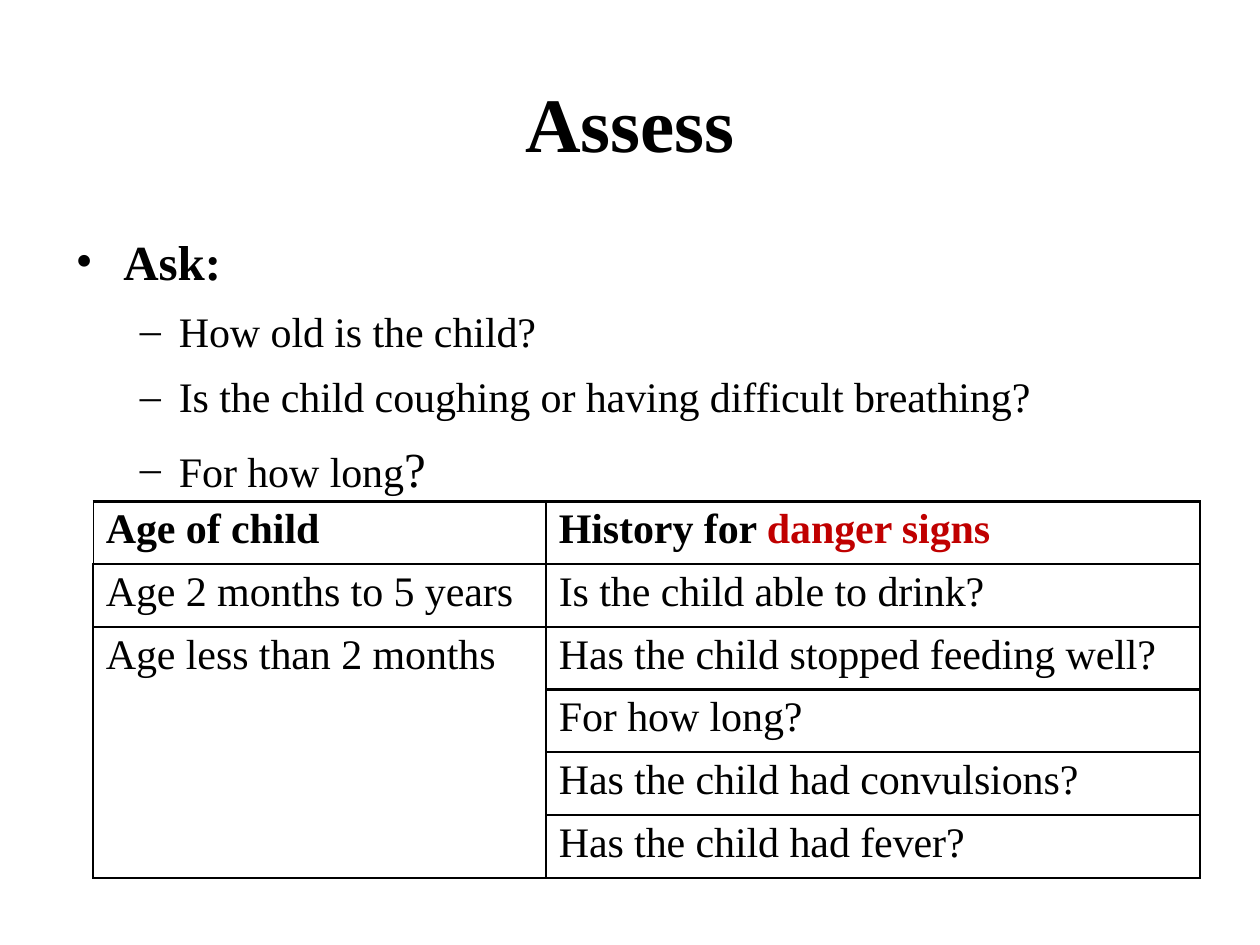
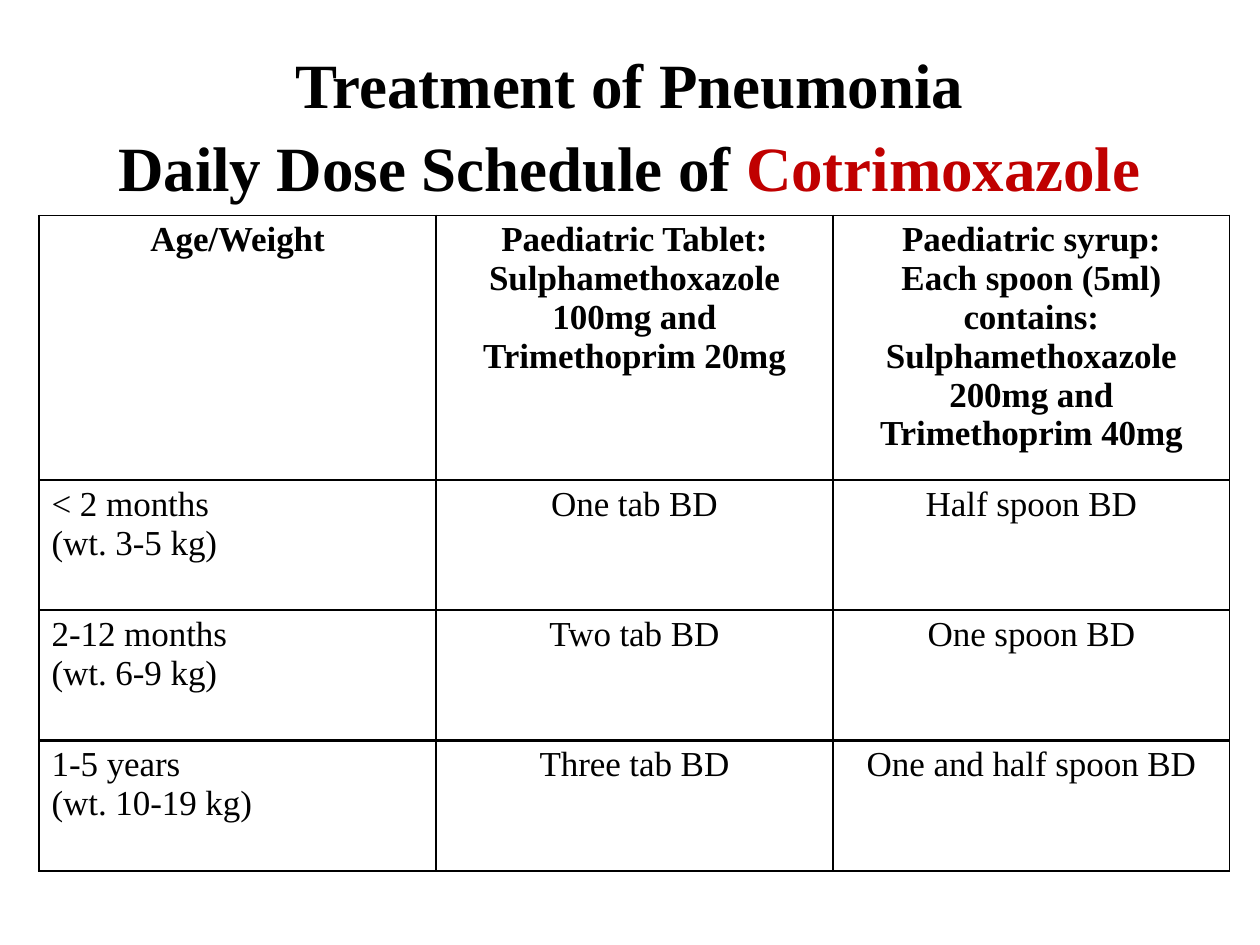
from lxml.etree import SubElement
from pptx import Presentation
from pptx.dml.color import RGBColor
from pptx.enum.text import PP_ALIGN
from pptx.oxml.ns import qn
from pptx.util import Inches, Pt

COLORS = {"ink": "000000", "danger": "C00000", "paper": "FFFFFF"}
FONT = "Times New Roman"
GRID_COLUMNS, GRID_ROWS = 100, 75
BULLETS = {"•": (0.39, -0.38), "–": (0.83, -0.31)}


def write(paragraph, text, size=24, bold=False, color="ink", spacing=-5):
    """Append text to the paragraph; each newline becomes a line break."""
    for number, line in enumerate(text.split("\n")):
        if number:
            paragraph.add_line_break()
        run = paragraph.add_run()
        run.text = line
        run.font.name = FONT
        run.font.size = Pt(size)
        run.font.bold = bold
        run.font.color.rgb = RGBColor.from_string(COLORS[color])
        run._r.get_or_add_rPr().set("spc", str(spacing))


def set_bullet(paragraph, symbol):
    margin, indent = BULLETS[symbol]
    properties = paragraph._p.get_or_add_pPr()
    properties.set("marL", str(Inches(margin)))
    properties.set("indent", str(Inches(indent)))
    SubElement(properties, qn("a:buFont"), typeface=FONT)
    SubElement(properties, qn("a:buChar"), char=symbol)


def set_borders(cell, **widths):
    """Draw the cell's edges; the keywords are left, right, top and bottom."""
    properties = cell._tc.get_or_add_tcPr()
    tags = {"left": "lnL", "right": "lnR", "top": "lnT", "bottom": "lnB"}
    for position, (side, tag) in enumerate(tags.items()):
        line = SubElement(properties, qn(f"a:{tag}"), w=str(Pt(widths[side])))
        fill = SubElement(line, qn("a:solidFill"))
        SubElement(fill, qn("a:srgbClr"), val=COLORS["ink"])
        properties.insert(position, line)


class Deck:
    def __init__(self):
        self.presentation = Presentation()
        self.presentation.slide_width = Inches(10)
        self.presentation.slide_height = Inches(7.5)
        self.slide = None

    def add_slide(self):
        self.slide = self.presentation.slides.add_slide(self.presentation.slide_layouts[6])
        fill = self.slide.background.fill
        fill.solid()
        fill.fore_color.rgb = RGBColor.from_string(COLORS["paper"])

    def x(self, columns):
        return int(self.presentation.slide_width * columns / GRID_COLUMNS)

    def y(self, rows):
        return int(self.presentation.slide_height * rows / GRID_ROWS)

    def place(self, left, top, width, height):
        return self.x(left), self.y(top), self.x(width), self.y(height)

    def fill_frame(self, frame, paragraphs, before, line_spacing=None, align=None, **style):
        """Write paragraphs, each a list of (text, format) runs."""
        for number, runs in enumerate(paragraphs):
            paragraph = frame.add_paragraph() if number else frame.paragraphs[0]
            paragraph.alignment = align
            paragraph.line_spacing = line_spacing
            paragraph.space_before = Pt(before[number] if number < len(before) else 0)
            for text, changes in runs:
                write(paragraph, text, **{**style, **changes})

    def text(self, at, paragraphs, before, inset, **style):
        frame = self.slide.shapes.add_textbox(*self.place(*at)).text_frame
        frame.word_wrap = True
        frame.margin_left = frame.margin_right = frame.margin_bottom = 0
        frame.margin_top = self.y(inset)
        self.fill_frame(frame, paragraphs, before, line_spacing=1.1, **style)
        return frame

    def title(self, at, paragraphs, inset, size):
        self.text(at, paragraphs, [1, 0.1], inset, size=size, bold=True, align=PP_ALIGN.CENTER)

    def bullets(self, at, items, before, inset):
        """Each item is a bullet symbol and its runs."""
        frame = self.text(at, [runs for _, runs in items], before, inset)
        for paragraph, (symbol, _) in zip(frame.paragraphs, items):
            set_bullet(paragraph, symbol)

    def table(self, at, widths, heights, rows, size, rules, left_rule_from=0,
              merge=None, centered=lambda row, column: False):
        """Build a table; rules are the widths of its horizontal lines."""
        table = self.slide.shapes.add_table(
            len(rows), len(widths), *self.place(*at, sum(widths), sum(heights))).table
        table.first_row = table.horz_banding = False
        for column, width in zip(table.columns, widths):
            column.width = self.x(width)
        for row, height in zip(table.rows, heights):
            row.height = self.y(height)
        if merge:
            first, last = merge
            table.cell(*first).merge(table.cell(*last))
        for row, values in enumerate(rows):
            for column, paragraphs in enumerate(values):
                cell = table.cell(row, column)
                cell.fill.background()
                if cell.is_spanned:
                    continue
                center = centered(row, column)
                cell.margin_left = 0 if center else self.x(1)
                cell.margin_right = cell.margin_bottom = 0
                cell.margin_top = self.y(0.4)
                self.fill_frame(cell.text_frame, paragraphs, [2.8], size=size, bold=row == 0,
                                align=PP_ALIGN.CENTER if center else PP_ALIGN.LEFT)
                thick = column == 0 and row >= left_rule_from
                set_borders(cell, left=1.5 if thick else 1, right=1,
                            top=rules[row], bottom=rules[row + 1])


def plain(*lines):
    return [[(line, {})] for line in lines]


def assess_slide(deck):
    deck.add_slide()
    deck.title((40, 5.2, 20, 7.6), plain("Assess"), inset=0.1, size=44)
    deck.bullets((5.9, 16.8, 76.4, 21.1), [
        ("•", [("Ask:", {"size": 28, "bold": True})]),
        ("–", [("How old is the child?", {})]),
        ("–", [("Is the child coughing or having difficult breathing?", {})]),
        ("–", [("For how long", {}), ("?", {"size": 28})]),
    ], before=[7.7, 5.8, 5.7, 6.8], inset=1.1)
    danger_header = [[("History for ", {}), ("danger signs", {"color": "danger"})]]
    questions = ["Has the child stopped feeding well?", "For how long?",
                 "Has the child had convulsions?", "Has the child had fever?"]
    ages = ["Age less than 2 months", "", "", ""]
    rows = [
        [plain("Age of child"), danger_header],
        [plain("Age 2 months to 5 years"), plain("Is the child able to drink?")],
        *([plain(age), plain(question)] for age, question in zip(ages, questions)),
    ]
    deck.table((7.4, 39.8), [35.95, 51.9], [4.98] * 6, rows, size=24, rules=[1.5] * 7,
               left_rule_from=1, merge=((2, 0), (5, 0)))


def dose_slide(deck):
    deck.add_slide()
    deck.title((4.5, 2.2, 90.9, 13.6), [
        [("Treatment of Pneumonia", {})],
        [("Daily Dose Schedule of ", {}), ("Cotrimoxazole", {"color": "danger"})],
    ], inset=0.8, size=36)
    tablet = "Paediatric Tablet:\nSulphamethoxazole\n100mg and\nTrimethoprim 20mg"
    syrup = ("Paediatric syrup:\nEach spoon (5ml)\ncontains:\n"
             "Sulphamethoxazole\n200mg and\nTrimethoprim 40mg")
    rows = [
        [plain("Age/Weight"), plain(tablet), plain(syrup)],
        [plain("< 2 months", "(wt. 3-5 kg)"), plain("One tab BD"), plain("Half spoon BD")],
        [plain("2-12 months", "(wt. 6-9 kg)"), plain("Two tab BD"), plain("One spoon BD")],
        [plain("1-5 years", "(wt. 10-19 kg)"), plain("Three tab BD"),
         plain("One and half spoon BD")],
    ]
    deck.table((3.1, 17.1), [31.5] * 3, [21] + [10.34] * 3, rows, size=20,
               rules=[1, 1, 1.5, 1.5, 1.5],
               centered=lambda row, column: row == 0 or column > 0)


def main():
    deck = Deck()
    assess_slide(deck)
    dose_slide(deck)
    deck.presentation.save("out.pptx")


if __name__ == "__main__":
    main()
